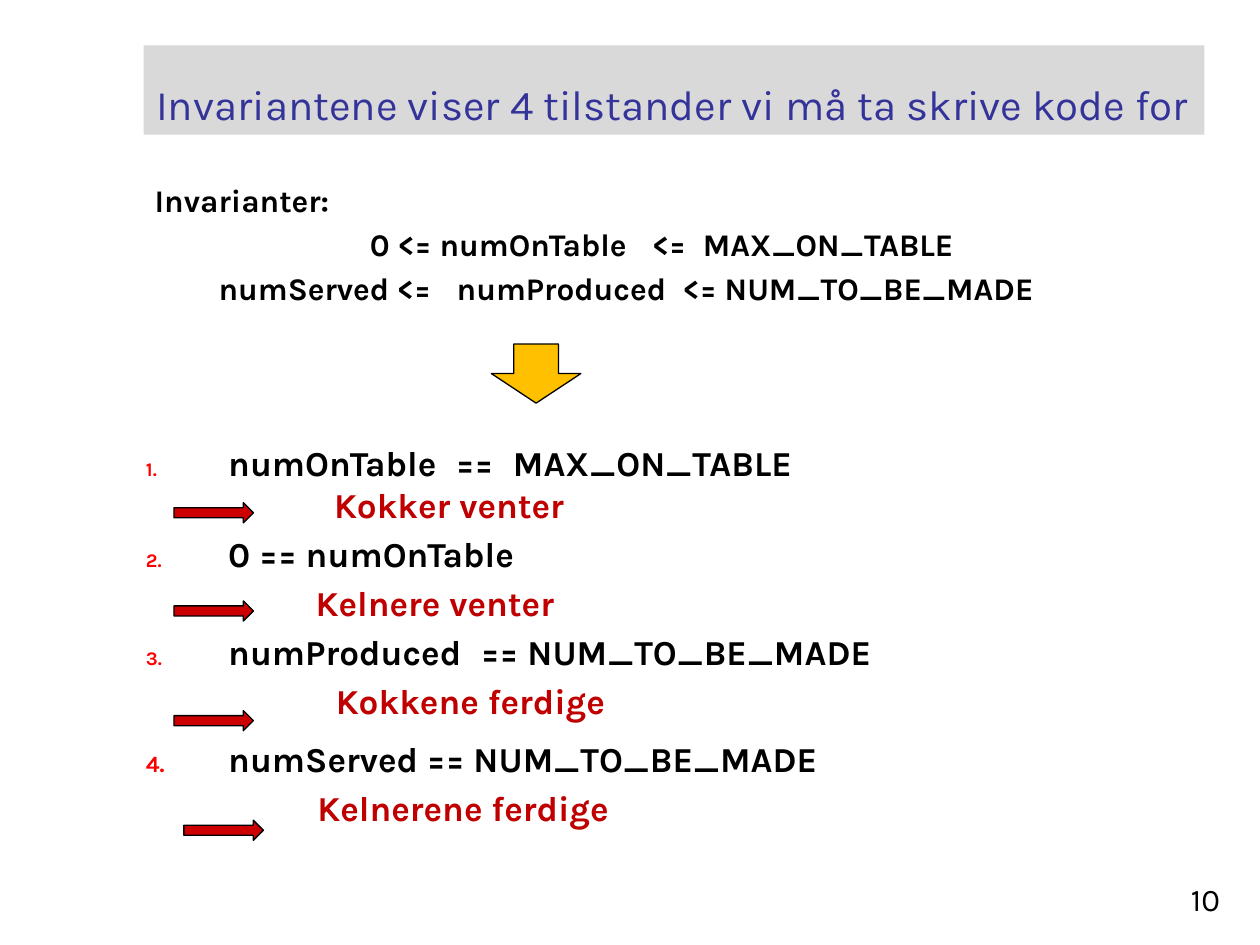
from dataclasses import dataclass
from typing import Optional

from lxml import etree
from pptx import Presentation
from pptx import util as u
from pptx.dml.color import RGBColor
from pptx.enum import shapes, text
from pptx.oxml.ns import qn

COLOURS = {
    "title": "333399", "band": "D9D9D9", "text": "000000", "action": "C00000",
    "number": "FF0000", "step": "FFC000", "pointer": "CC0000",
}
FONT = "Karla"


@dataclass
class Line:
    """Pieces are strings, or numbers that widen the space between two strings."""
    pieces: tuple
    left: float = 0
    before: float = 4
    size: float = 20
    colour: str = "text"
    bold: bool = True
    number: Optional[int] = None
    number_size: int = 55


@dataclass
class Arrow:
    kind: shapes.MSO_SHAPE
    left: float
    top: float
    width: float
    height: float
    colour: str


TITLE = Line(("Invariantene viser 4 tilstander vi må ta skrive kode for",),
             size=24, colour="title", bold=False)
PAGE = Line(("10",), size=18, bold=False)
INVARIANTS = [
    Line(("Invarianter:",), 5, size=18),
    Line(("0 <= numOnTable", 10, "<=", 5, "MAX_ON_TABLE"), 128, 3.6, 18),
    Line(("numServed <=", 10, "numProduced", 5, "<= NUM_TO_BE_MADE"), 41.5, 3.6, 18),
]
STATES = [
    Line(("numOnTable", 6, "==", 6, "MAX_ON_TABLE"), 47, number=1),
    Line(("Kokker venter",), 107.5, 0, colour="action"),
    Line(("0 == numOnTable",), 47, number=2),
    Line(("Kelnere venter",), 97, colour="action"),
    Line(("numProduced", 6, "== NUM_TO_BE_MADE"), 47, number=3),
    Line(("Kokkene ferdige",), 108.5, colour="action"),
    Line(("numServed == NUM_TO_BE_MADE",), 47, 9, number=4, number_size=66),
    Line(("Kelnerene ferdige",), 98, colour="action"),
]
POINTERS = [(99.4, 287.3), (99.4, 343.4), (99.4, 406.1), (105.1, 468.7)]
ARROWS = [Arrow(shapes.MSO_SHAPE.DOWN_ARROW, 280.8, 196.6, 51.1, 33.8, "step")] + [
    Arrow(shapes.MSO_SHAPE.RIGHT_ARROW, left, top, 45.4, 11.5, "pointer")
    for left, top in POINTERS]


def rgb(name: str) -> RGBColor:
    return RGBColor.from_string(COLOURS[name])


def set_margins(p, line: Line) -> None:
    """Set the left margin, and a hanging number where the line has one."""
    ppr = p._p.get_or_add_pPr()
    ppr.set("marL", str(u.Pt(line.left)))
    ppr.set("indent", "0")
    if line.number is None:
        return
    ppr.set("indent", str(-u.Pt(line.left)))
    colour = etree.SubElement(ppr, qn("a:buClr"))
    etree.SubElement(colour, qn("a:srgbClr"), val=COLOURS["number"])
    etree.SubElement(ppr, qn("a:buSzPct"), val=str(line.number_size * 1000))
    etree.SubElement(ppr, qn("a:buFont"), typeface=FONT)
    etree.SubElement(ppr, qn("a:buAutoNum"), type="arabicPeriod",
                     startAt=str(line.number))


def write_line(p, line: Line) -> None:
    set_margins(p, line)
    formats = {"name": FONT, "size": u.Pt(line.size), "bold": line.bold}
    for piece in line.pieces:
        r = p.add_run()
        r.text = piece if isinstance(piece, str) else " "
        for key, value in formats.items():
            setattr(r.font, key, value)
        r.font.color.rgb = rgb(line.colour)
        if not isinstance(piece, str):
            r._r.get_or_add_rPr().set("spc", str(piece * 100))


def add_text(s, box: tuple, lines: list, anchor=text.MSO_ANCHOR.TOP,
             align=text.PP_ALIGN.LEFT, wrap: bool = True):
    sp = s.shapes.add_textbox(*map(u.Pt, box))
    tf = sp.text_frame
    tf.word_wrap = wrap
    tf.vertical_anchor = anchor
    for i, line in enumerate(lines):
        p = tf.add_paragraph() if i else tf.paragraphs[0]
        p.alignment = align
        if i:
            p.space_before = u.Pt(line.before)
        write_line(p, line)
    return sp


def add_arrow(s, arrow: Arrow) -> None:
    box = (arrow.left, arrow.top, arrow.width, arrow.height)
    sp = s.shapes.add_shape(arrow.kind, *map(u.Pt, box))
    sp.shadow.inherit = False
    sp.fill.solid()
    sp.fill.fore_color.rgb = rgb(arrow.colour)
    sp.line.color.rgb = rgb("text")
    sp.line.width = u.Pt(0.75)


def main() -> None:
    prs = Presentation()
    prs.slide_width, prs.slide_height = u.Pt(720), u.Pt(540)
    s = prs.slides.add_slide(prs.slide_layouts[6])
    bottom = text.MSO_ANCHOR.BOTTOM
    title = add_text(s, (82.1, 25.9, 606.2, 51.1), [TITLE], bottom, wrap=False)
    title.fill.solid()
    title.fill.fore_color.rgb = rgb("band")
    add_text(s, (76.3, 100, 606.2, 84), INVARIANTS)
    add_text(s, (76.3, 249, 606.2, 235), STATES)
    add_text(s, (554.4, 491.8, 149.8, 36), [PAGE], bottom, text.PP_ALIGN.RIGHT)
    for arrow in ARROWS:
        add_arrow(s, arrow)
    prs.save("out.pptx")


if __name__ == "__main__":
    main()
